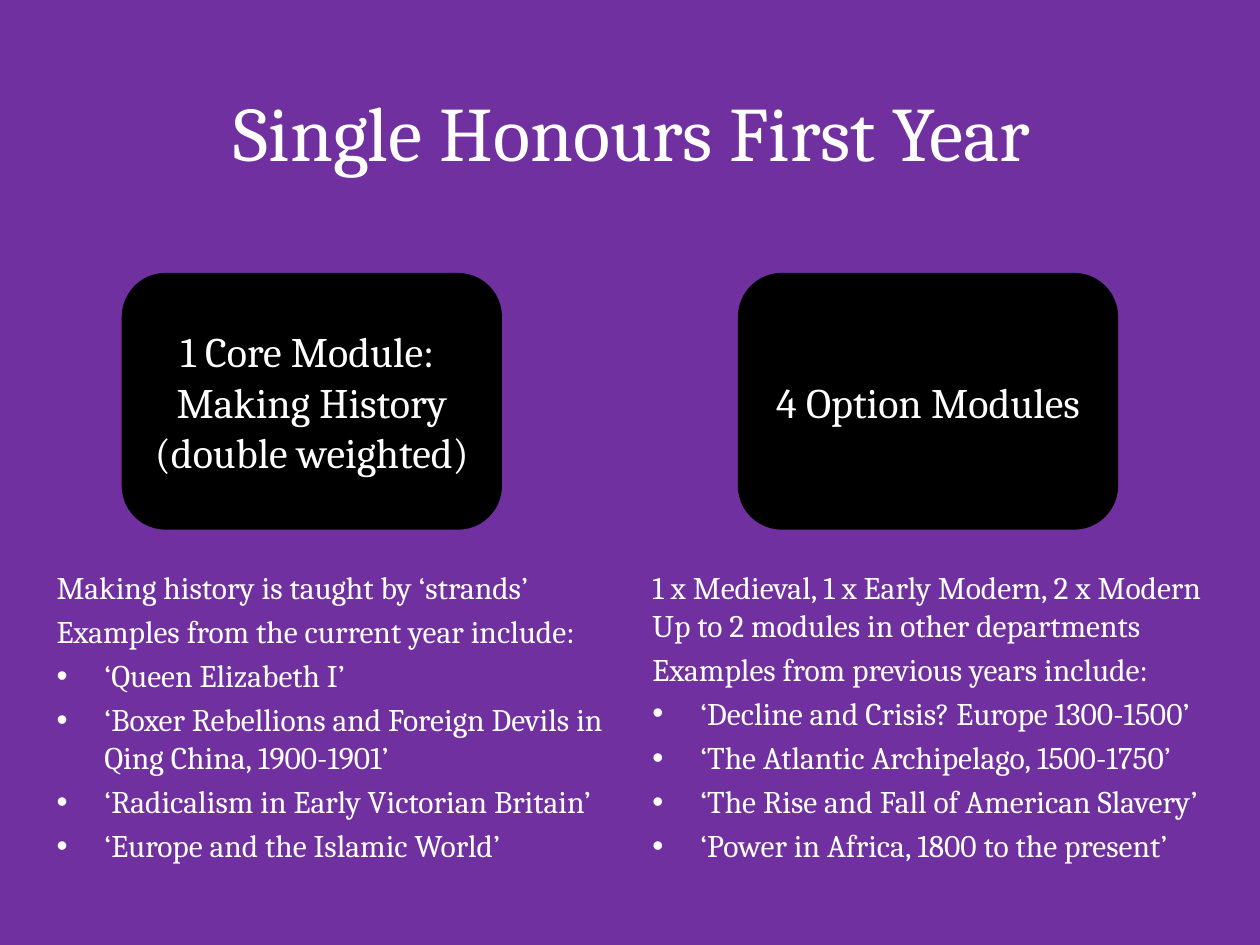
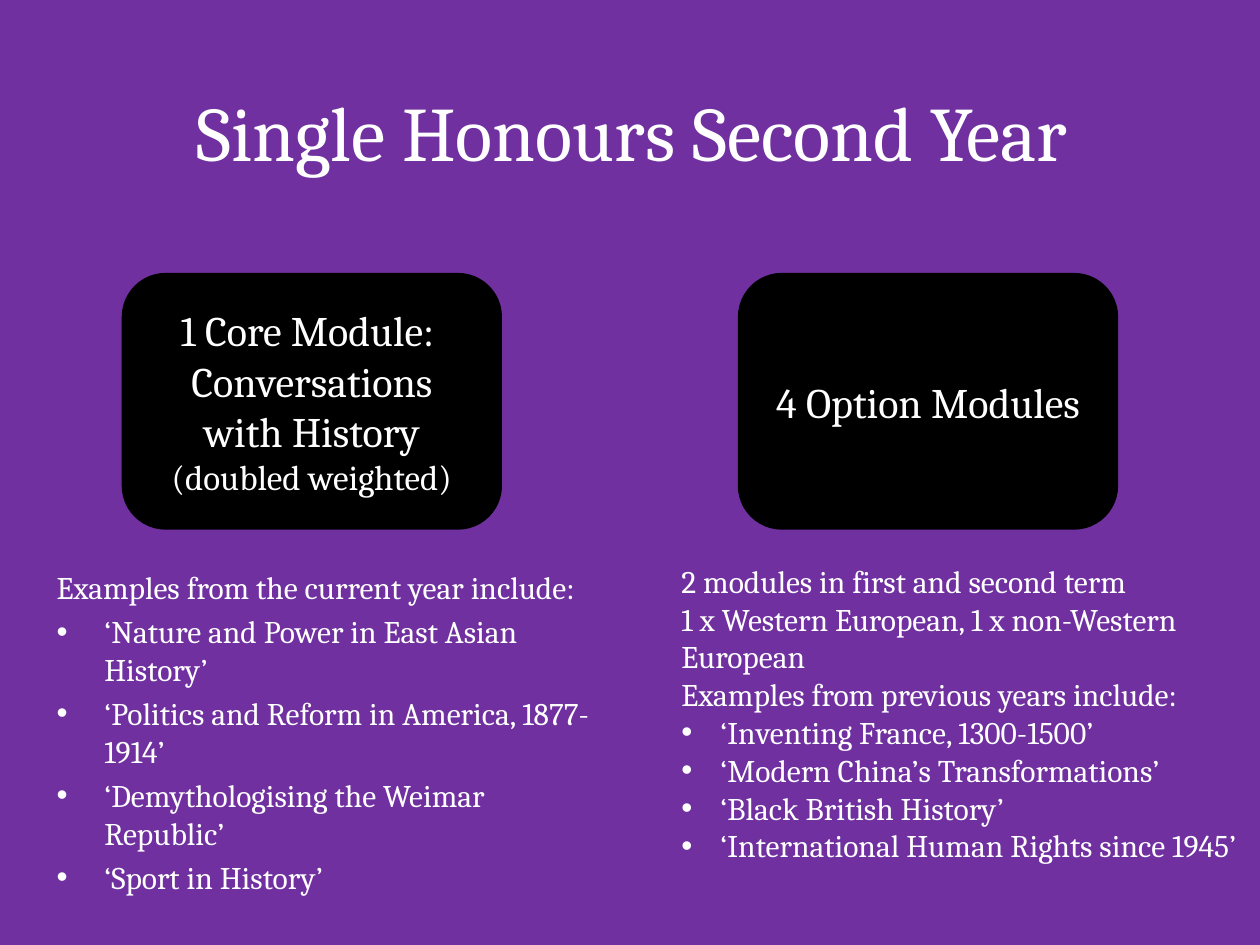
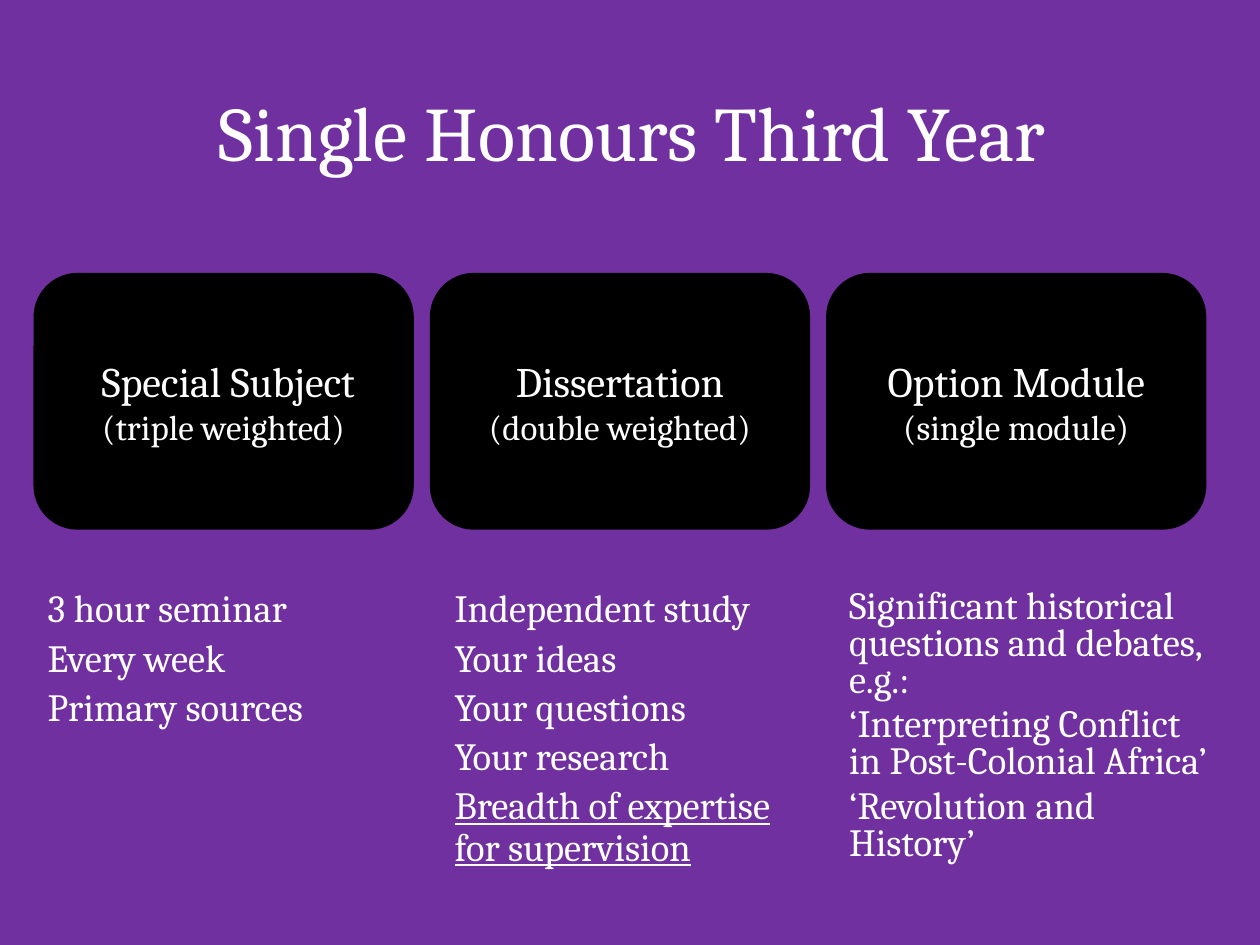
from dataclasses import dataclass

from lxml import etree
from pptx import Presentation
from pptx.dml.color import RGBColor
from pptx.enum.shapes import MSO_SHAPE
from pptx.enum.text import MSO_ANCHOR, MSO_AUTO_SIZE, PP_ALIGN
from pptx.oxml.ns import qn
from pptx.util import Inches, Pt

CARD_SHAPE = MSO_SHAPE.FLOWCHART_ALTERNATE_PROCESS
MIDDLE, TOP = MSO_ANCHOR.MIDDLE, MSO_ANCHOR.TOP
CENTER, LEFT = PP_ALIGN.CENTER, PP_ALIGN.LEFT
NO_AUTOFIT = MSO_AUTO_SIZE.NONE
TITLE_ONLY = 5


@dataclass(frozen=True)
class Theme:
    font: str = "Cambria"
    background: RGBColor = RGBColor(0x70, 0x30, 0xA0)
    card: RGBColor = RGBColor(0, 0, 0)
    text: RGBColor = RGBColor(0xFF, 0xFF, 0xFF)
    title: int = 44
    card_name: int = 24
    card_weight: int = 20
    examples: int = 18
    details: int = 22


THEME = Theme()

TITLE_AREA = (0.75, 0.61, 8.67, 0.86)
CARD_TOP, CARD_WIDTH, CARD_HEIGHT = 2.18, 2.99, 2.01
# Number of columns: (left of the first card, step to the next card)
CARD_GRID = {2: (0.98, 4.89), 3: (0.28, 3.145)}

# Each column: card names, smaller card line, area and text below the card
YEARS = [
    ("Single Honours First Year ", [
        dict(names=["1 Core Module: ", "Making History", "(double weighted)"],
             area=(0.35, 4.46, 4.72, 2.68),
             notes=["Making history is taught by ‘strands’",
                    "Examples from the current year include:"],
             modules=["‘Queen Elizabeth I’",
                      "‘Boxer Rebellions and Foreign Devils in Qing China, 1900-1901’",
                      "‘Radicalism in Early Victorian Britain’",
                      "‘Europe and the Islamic World’"]),
        dict(names=["4 Option Modules"],
             area=(5.08, 4.46, 4.8, 2.91),
             notes=["1 x Medieval, 1 x Early Modern, 2 x Modern "
                    "Up to 2 modules in other departments",
                    "Examples from previous years include:"],
             modules=["‘Decline and Crisis? Europe 1300-1500’",
                      "‘The Atlantic Archipelago, 1500-1750’",
                      "‘The Rise and Fall of American Slavery’",
                      "‘Power in Africa, 1800 to the present’"]),
    ]),
    ("Single Honours Second Year ", [
        dict(names=["1 Core Module: ", "Conversations with History"],
             weight="(doubled weighted)",
             area=(0.35, 4.46, 4.49, 2.68),
             notes=["Examples from the current year include:"],
             modules=["‘Nature and Power in East Asian History’",
                      "‘Politics and Reform in America, 1877-1914’",
                      "‘Demythologising the Weimar Republic’",
                      "‘Sport in History’"]),
        dict(names=["4 Option Modules"],
             area=(5.31, 4.41, 4.65, 2.83), gap=0, indent=0.31,
             notes=["2 modules in first and second term",
                    "1 x Western European, 1 x non-Western European",
                    "Examples from previous years include:"],
             modules=["‘Inventing France, 1300-1500’",
                      "‘Modern China’s Transformations’",
                      "‘Black British History’",
                      "‘International Human Rights since 1945’"]),
    ]),
    ("Single Honours Third Year ", [
        dict(names=[" Special Subject"], weight="(triple weighted)",
             area=(0.28, 4.63, 2.99, 2.83), size=THEME.details, spacing=0.9,
             notes=["3 hour seminar", "Every week", "Primary sources"]),
        dict(names=["Dissertation"], weight="(double weighted)",
             area=(3.51, 4.63, 2.96, 2.83), size=THEME.details, spacing=0.9,
             notes=["Independent study", "Your ideas", "Your questions",
                    "Your research"],
             underlined=["Breadth of expertise for supervision"]),
        dict(names=["Option Module"], weight="(single module)",
             area=(6.64, 4.63, 3.08, 2.83), size=THEME.details, spacing=0.8,
             notes=["Significant historical questions and debates, e.g.:",
                    "‘Interpreting Conflict in Post-Colonial Africa’",
                    "‘Revolution and History’"]),
    ]),
]


def inches(area):
    return [Inches(length) for length in area]


def write(frame, lines, size, align=LEFT, anchor=TOP, gap=0, spacing=None,
          indent=0, underline=None):
    """Append lines to a text frame; gap is a share of the type size."""
    frame.word_wrap = True
    frame.auto_size = NO_AUTOFIT
    frame.vertical_anchor = anchor
    for line in lines:
        first = not frame.text
        paragraph = frame.paragraphs[0] if first else frame.add_paragraph()
        paragraph.text = line
        paragraph.alignment = align
        paragraph.space_before = Pt(0 if first else size * gap)
        paragraph.line_spacing = spacing
        if indent:
            add_bullet(paragraph, indent)
        font = paragraph.font
        font.name, font.size, font.underline = THEME.font, Pt(size), underline
        font.color.rgb = THEME.text


def add_bullet(paragraph, indent):
    properties = paragraph._p.get_or_add_pPr()
    properties.set("marL", str(Inches(indent)))
    properties.set("indent", str(-Inches(indent)))
    etree.SubElement(properties, qn("a:buFont")).set("typeface", "Arial")
    etree.SubElement(properties, qn("a:buChar")).set("char", "•")


def add_card(slide, left, column):
    card = slide.shapes.add_shape(
        CARD_SHAPE, *inches((left, CARD_TOP, CARD_WIDTH, CARD_HEIGHT)))
    card.shadow.inherit = False
    card.fill.solid()
    card.fill.fore_color.rgb = card.line.color.rgb = THEME.card
    card.line.width = Pt(2)
    centred = dict(align=CENTER, anchor=MIDDLE)
    write(card.text_frame, column["names"], THEME.card_name, **centred)
    if "weight" in column:
        write(card.text_frame, [column["weight"]], THEME.card_weight, **centred)


def add_description(slide, column):
    frame = slide.shapes.add_textbox(*inches(column["area"])).text_frame
    style = dict(size=column.get("size", THEME.examples),
                 gap=column.get("gap", 0.2), spacing=column.get("spacing"))
    write(frame, column["notes"], **style)
    write(frame, column.get("modules", []),
          indent=column.get("indent", 0.38), **style)
    write(frame, column.get("underlined", []), underline=True, **style)


def add_year(deck, heading, columns):
    slide = deck.slides.add_slide(deck.slide_layouts[TITLE_ONLY])
    title = slide.shapes.title
    title.left, title.top, title.width, title.height = inches(TITLE_AREA)
    write(title.text_frame, [heading], THEME.title, align=CENTER, anchor=MIDDLE)
    start, step = CARD_GRID[len(columns)]
    for index, column in enumerate(columns):
        add_card(slide, start + index * step, column)
        add_description(slide, column)


def main():
    deck = Presentation()
    deck.slide_width, deck.slide_height = Inches(10), Inches(7.5)
    backdrop = deck.slide_master.background.fill
    backdrop.solid()
    backdrop.fore_color.rgb = THEME.background
    for heading, columns in YEARS:
        add_year(deck, heading, columns)
    deck.save("out.pptx")


if __name__ == "__main__":
    main()
